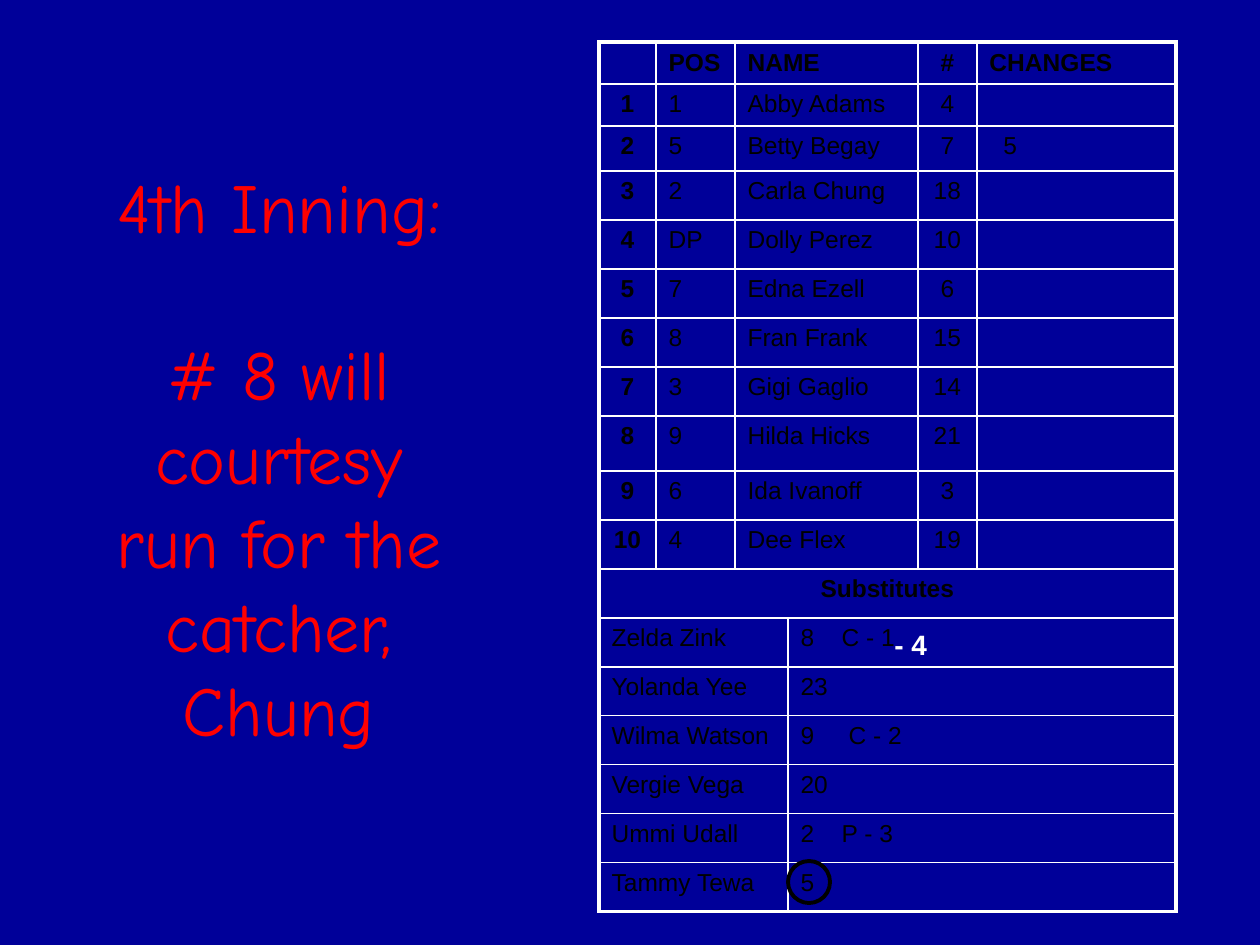
from dataclasses import dataclass

from lxml import etree
from pptx import Presentation
from pptx.dml.color import RGBColor
from pptx.enum.shapes import MSO_SHAPE
from pptx.enum.text import MSO_ANCHOR, PP_ALIGN
from pptx.oxml.ns import qn
from pptx.util import Emu, Pt

LEFT, CENTER = PP_ALIGN.LEFT, PP_ALIGN.CENTER
TOP, MIDDLE = MSO_ANCHOR.TOP, MSO_ANCHOR.MIDDLE
OVAL = MSO_SHAPE.OVAL

NAVY = RGBColor(0x00, 0x00, 0x99)
RED = RGBColor(0xFF, 0x00, 0x00)
WHITE = RGBColor(0xFF, 0xFF, 0xFF)
BLACK = RGBColor(0x00, 0x00, 0x00)

PX_PER_INCH = 126
THIN, THICK = Pt(1), Pt(2.25)
COLUMN_WIDTHS = [57, 79, 53, 130, 59, 199]
ROW_HEIGHTS = [42, 42, 45] + [49] * 5 + [55] + [49] * 9


@dataclass
class Entry:
    """Text in a table cell; indent and tab are in px."""
    text: str
    column: int
    span: int = 1
    align: PP_ALIGN = LEFT
    bold: bool = False
    anchor: MSO_ANCHOR = TOP
    indent: int = 0
    tab: int = 0


@dataclass
class Player:
    position: str
    name: str
    number: str
    change: str = ""


@dataclass
class Substitute:
    name: str
    number: str
    role: str = ""
    tab: int = 41


PLAYERS = [
    Player("1", "Abby Adams", "4"),
    Player("5", "Betty Begay", "7", "5"),
    Player("2", "Carla Chung", "18"),
    Player("DP", "Dolly Perez", "10"),
    Player("7", "Edna Ezell", "6"),
    Player("8", "Fran Frank", "15"),
    Player("3", "Gigi Gaglio", "14"),
    Player("9", "Hilda Hicks", "21"),
    Player("6", "Ida Ivanoff", "3"),
    Player("4", "Dee Flex", "19"),
]
SUBSTITUTES = [
    Substitute("Zelda Zink", "8", "C - 1"),
    Substitute("Yolanda Yee", "23"),
    Substitute("Wilma Watson", "9", "C - 2", 48),
    Substitute("Vergie Vega", "20"),
    Substitute("Ummi Udall", "2", "P - 3"),
    Substitute("Tammy Tewa", "5"),
]


def px(length: int) -> Emu:
    return Emu(round(length * 914400 / PX_PER_INCH))


def style(paragraph, font_name: str, size: int, color: RGBColor, bold: bool = False) -> None:
    font = paragraph.font
    font.name, font.size, font.bold = font_name, Pt(size), bold
    font.color.rgb = color


def add_text(slide, left: int, top: int, width: int, height: int):
    frame = slide.shapes.add_textbox(px(left), px(top), px(width), px(height)).text_frame
    frame.word_wrap = True
    return frame


def draw_borders(cell, row: int, entry: Entry) -> None:
    outer = {
        "a:lnL": entry.column == 0,
        "a:lnR": entry.column + entry.span == len(COLUMN_WIDTHS),
        "a:lnT": row == 0,
        "a:lnB": row == len(ROW_HEIGHTS) - 1,
    }
    properties = cell._tc.get_or_add_tcPr()
    for side, is_outer in outer.items():
        line = etree.SubElement(properties, qn(side), w=str(THICK if is_outer else THIN))
        fill = etree.SubElement(line, qn("a:solidFill"))
        etree.SubElement(fill, qn("a:srgbClr"), val=str(WHITE))


def fill_cell(table, row: int, entry: Entry) -> None:
    cell = table.cell(row, entry.column)
    if entry.span > 1:
        cell.merge(table.cell(row, entry.column + entry.span - 1))
    draw_borders(cell, row, entry)
    cell.fill.background()
    cell.vertical_anchor = entry.anchor
    paragraph = cell.text_frame.paragraphs[0]
    paragraph.alignment = entry.align
    properties = paragraph._p.get_or_add_pPr()
    if entry.indent:
        properties.set("marL", str(px(entry.indent)))
    if entry.tab:
        tabs = etree.SubElement(properties, qn("a:tabLst"))
        etree.SubElement(tabs, qn("a:tab"), pos=str(px(entry.tab)), algn="l")
    style(paragraph, "Arial", 14, BLACK, entry.bold)
    if entry.text:
        paragraph.add_run().text = entry.text
    else:
        etree.SubElement(paragraph._p, qn("a:endParaRPr"), sz="1400")


def lineup_rows() -> list[list[Entry]]:
    rows = [[
        Entry("", 0),
        Entry("POS", 1, bold=True, anchor=MIDDLE),
        Entry("NAME", 2, 2, bold=True, anchor=MIDDLE),
        Entry("#", 4, align=CENTER, bold=True, anchor=MIDDLE),
        Entry("CHANGES", 5, bold=True, anchor=MIDDLE),
    ]]
    for order, player in enumerate(PLAYERS, start=1):
        rows.append([
            Entry(str(order), 0, align=CENTER, bold=True),
            Entry(player.position, 1),
            Entry(player.name, 2, 2),
            Entry(player.number, 4, align=CENTER),
            Entry(player.change, 5, indent=14 if player.change else 0),
        ])
    rows.append([Entry("Substitutes", 0, 6, CENTER, True)])
    for sub in SUBSTITUTES:
        usage = f"{sub.number}\t{sub.role}" if sub.role else sub.number
        rows.append([Entry(sub.name, 0, 3), Entry(usage, 3, 3, tab=sub.tab if sub.role else 0)])
    return rows


def add_lineup(slide) -> None:
    table = slide.shapes.add_table(
        len(ROW_HEIGHTS), len(COLUMN_WIDTHS), px(599), px(42),
        px(sum(COLUMN_WIDTHS)), px(sum(ROW_HEIGHTS))).table
    table.first_row = table.horz_banding = False
    for column, width in zip(table.columns, COLUMN_WIDTHS):
        column.width = px(width)
    for row, height in zip(table.rows, ROW_HEIGHTS):
        row.height = px(height)
    for row, entries in enumerate(lineup_rows()):
        for entry in entries:
            fill_cell(table, row, entry)


def main() -> None:
    deck = Presentation()
    deck.slide_width, deck.slide_height = px(1260), px(945)
    slide = deck.slides.add_slide(deck.slide_layouts[6])
    slide.background.fill.solid()
    slide.background.fill.fore_color.rgb = NAVY

    # Inning announcement
    title = add_text(slide, 95, 84, 368, 746)
    title.vertical_anchor = MIDDLE
    title.text = "4th Inning:\n# 8 will courtesy run for the catcher, Chung"
    for paragraph in title.paragraphs:
        paragraph.alignment = CENTER
        style(paragraph, "Comic Neue", 40, RED)
    title.paragraphs[1].space_before = Pt(48)

    # Substitution mark beside the first substitute
    mark = add_text(slide, 882, 621, 102, 47)
    mark.text = "- 4"
    style(mark.paragraphs[0], "Arial", 16, WHITE, True)

    # Lineup card
    add_lineup(slide)

    # Circle around the last substitute's number
    circle = slide.shapes.add_shape(OVAL, px(788), px(861), px(42), px(42))
    circle.shadow.inherit = False
    circle.fill.background()
    circle.line.color.rgb = BLACK
    circle.line.width = THICK

    deck.save("out.pptx")


if __name__ == "__main__":
    main()
